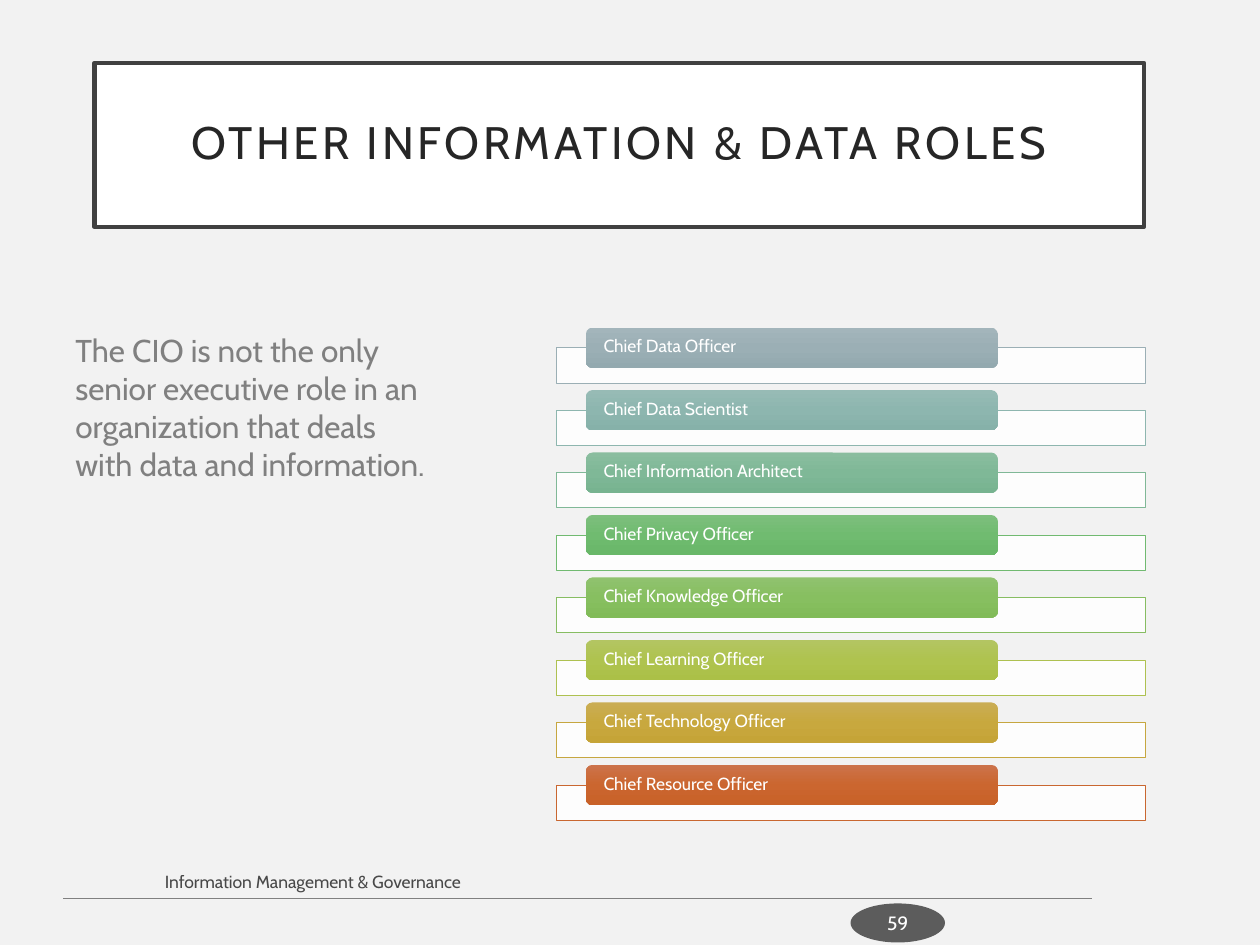
from copy import deepcopy

from lxml.etree import SubElement
from pptx import Presentation
from pptx.dml.color import RGBColor
from pptx.enum.shapes import MSO_CONNECTOR as Connector, MSO_SHAPE as Shape
from pptx.enum.text import MSO_ANCHOR as Anchor, PP_ALIGN as Align
from pptx.oxml.ns import qn
from pptx.util import Inches, Pt


def color(hex_value):
    return RGBColor.from_string(hex_value)


def set_alpha(element, percent):
    """Make the first solid colour inside the element translucent."""
    tone = element.find(f".//{qn('a:solidFill')}/{qn('a:srgbClr')}")
    SubElement(tone, qn("a:alpha"), val=str(percent * 1000))


class SlideBuilder:
    font = "Cabin"

    def __init__(self, page):
        self.page = page

    def background(self, hex_value):
        fill = self.page.background.fill
        fill.solid()
        fill.fore_color.rgb = color(hex_value)

    def shape(self, kind, at, fill=None, alpha=None, line=None, width=0.5):
        box = self.page.shapes.add_shape(kind, *map(Inches, at))
        box.shadow.inherit = False
        if fill:
            box.fill.solid()
            box.fill.fore_color.rgb = color(fill)
        if alpha:
            set_alpha(box._element.spPr, alpha)
        if line:
            box.line.color.rgb = color(line)
            box.line.width = Pt(width)
        else:
            box.line.fill.background()
        return box

    def gradient_bar(self, at, tones):
        """Rounded bar with three evenly spaced tones from top to bottom."""
        bar = self.shape(Shape.ROUNDED_RECTANGLE, at)
        bar.fill.gradient()
        bar.fill.gradient_angle = 270
        stop_list = bar._element.spPr.find(f".//{qn('a:gsLst')}")
        stop_list.append(deepcopy(stop_list[-1]))
        for index, (stop, tone) in enumerate(zip(bar.fill.gradient_stops, tones)):
            stop.position = index / 2
            stop.color.rgb = color(tone)

    def text_box(self, at, text, size, hex_value, **options):
        box = self.page.shapes.add_textbox(*map(Inches, at))
        self.set_text(box, text, size, hex_value, **options)

    def set_text(self, box, text, size, hex_value, anchor=Anchor.MIDDLE, align=Align.LEFT,
                 insets=(0.1, 0.05), line_spacing=None, after=None, tracking=None, alpha=None):
        frame = box.text_frame
        frame.text = text
        frame.word_wrap = True
        frame.vertical_anchor = anchor
        frame.margin_left = frame.margin_right = Inches(insets[0])
        frame.margin_top = frame.margin_bottom = Inches(insets[1])
        para = frame.paragraphs[0]
        para.alignment = align
        if line_spacing:
            para.line_spacing = line_spacing
        if after:
            para.space_after = Pt(after)
        span = para.runs[0]
        span.font.name = self.font
        span.font.size = Pt(size)
        span.font.color.rgb = color(hex_value)
        if tracking:
            span._r.get_or_add_rPr().set("spc", str(tracking * 100))
        if alpha:
            set_alpha(span._r, alpha)

    def line(self, start, end, hex_value, width):
        rule = self.page.shapes.add_connector(Connector.STRAIGHT, *map(Inches, start + end))
        rule.line.color.rgb = color(hex_value)
        rule.line.width = Pt(width)
        SubElement(rule._element.spPr, qn("a:effectLst"))


# Role, outline of its frame, gradient tones of its bar
ROLES = [
    ("Chief Data Officer", "9BAFB5", ("A3B5BB", "9BAFB5", "93A9AF")),
    ("Chief Data Scientist", "8EB6AF", ("97BBB5", "8DB6AF", "86B1A9")),
    ("Chief Information Architect", "80B897", ("8ABD9F", "7FB897", "77B390")),
    ("Chief Privacy Officer", "71BA71", ("7DBF7D", "70BB70", "68B768")),
    ("Chief Knowledge Officer", "87BD62", ("90C26F", "87BF60", "81BB58")),
    ("Chief Learning Officer", "AEC151", ("B3C562", "AFC34F", "ABC047")),
    ("Chief Technology Officer", "C6A740", ("CAAD55", "C8A83E", "C5A437")),
    ("Chief Resource Officer", "C96731", ("CC734B", "CB662F", "C86128")),
]
FIRST_TOP, LAST_TOP = 2.6, 6.07


def main():
    deck = Presentation()
    deck.slide_width, deck.slide_height = Inches(10), Inches(7.5)
    slide = SlideBuilder(deck.slides.add_slide(deck.slide_layouts[6]))
    slide.background("F2F2F2")

    # Footer rule
    slide.line((0.5, 7.13), (8.67, 7.13), "808080", 0.5)

    # Title
    title = slide.shape(Shape.RECTANGLE, (0.75, 0.5, 8.33, 1.3), "FFFFFF",
                        line="404040", width=2.5)
    slide.set_text(title, "OTHER INFORMATION & DATA ROLES", 26, "262626",
                   align=Align.CENTER, insets=(0.2, 0.2), line_spacing=0.9, tracking=2)

    # Introduction
    slide.text_box((0.5, 2.58, 3, 1.6),
                   "The CIO is not the only senior executive role in an organization "
                   "that deals with data and information.",
                   18, "808080", anchor=Anchor.TOP)

    # List of roles
    pitch = (LAST_TOP - FIRST_TOP) / (len(ROLES) - 1)
    for index, (role, outline, tones) in enumerate(ROLES):
        top = FIRST_TOP + index * pitch
        slide.shape(Shape.RECTANGLE, (4.42, top + 0.16, 4.67, 0.28), "FFFFFF",
                    alpha=90, line=outline)
        slide.gradient_bar((4.65, top, 3.27, 0.32), tones)
        slide.text_box((4.67, top + 0.01, 3.24, 0.29), role, 10, "FFFFFF",
                       insets=(0.12, 0), line_spacing=0.9)

    # Footer and page number
    slide.text_box((1.21, 6.82, 4.98, 0.35), "Information Management & Governance",
                   10, "000000", after=6, alpha=70)
    badge = slide.shape(Shape.OVAL, (6.75, 7.17, 0.75, 0.31), "1D1D1D", alpha=70)
    slide.set_text(badge, "59", 11, "FFFFFF", align=Align.CENTER, insets=(0.02, 0.05), after=6)

    deck.save("out.pptx")


if __name__ == "__main__":
    main()
